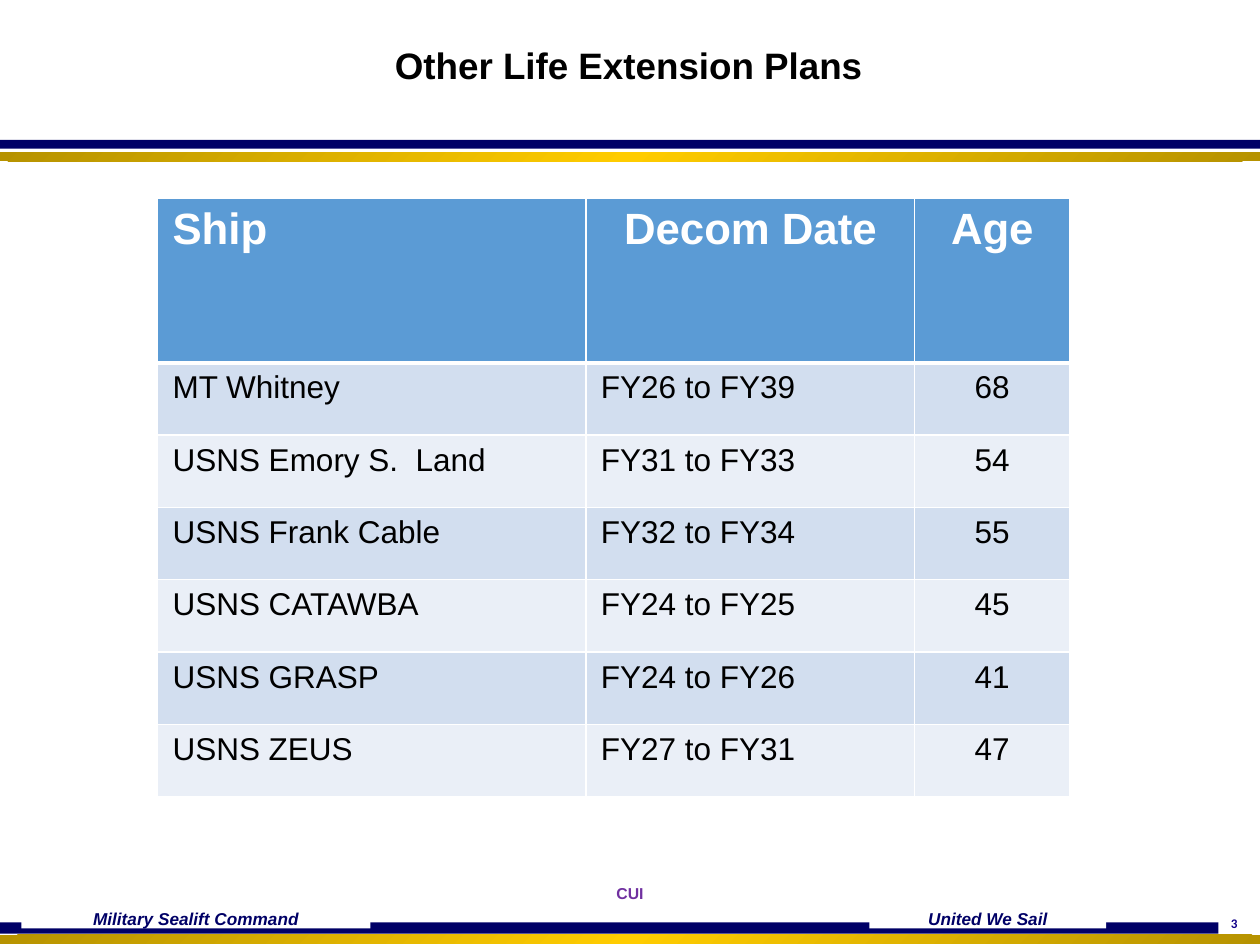
from dataclasses import dataclass
from typing import Optional

from lxml.etree import SubElement
from pptx import Presentation
from pptx.dml.color import RGBColor
from pptx.enum.shapes import MSO_SHAPE as Preset
from pptx.enum.text import MSO_ANCHOR as Anchor, PP_ALIGN as Align
from pptx.oxml import parse_xml
from pptx.oxml.ns import nsdecls, qn
from pptx.util import Inches, Pt

NAVY = RGBColor(0x00, 0x00, 0x66)
NUMBER_BLUE = RGBColor(0x11, 0x01, 0x89)
PURPLE = RGBColor(0x70, 0x30, 0xA0)
DARK_GOLD = RGBColor(0xB6, 0x92, 0x00)
GOLD = RGBColor(0xFF, 0xCC, 0x00)
HEADER_BLUE = RGBColor(0x5B, 0x9B, 0xD5)
BAND_DARK = RGBColor(0xD2, 0xDE, 0xEF)
BAND_LIGHT = RGBColor(0xEA, 0xEF, 0xF7)
WHITE = RGBColor(0xFF, 0xFF, 0xFF)
BLACK = RGBColor(0x00, 0x00, 0x00)

WIDTH, HEIGHT = Inches(10), Inches(7.5)
GRID_COLUMNS, GRID_ROWS = 100, 75


@dataclass(frozen=True)
class Area:
    column: float
    row: float
    columns: float
    rows: float

    def lengths(self) -> tuple[int, int, int, int]:
        return (across(self.column), down(self.row), across(self.columns), down(self.rows))


@dataclass(frozen=True)
class Bar:
    area: Area
    color: Optional[RGBColor] = None


@dataclass(frozen=True)
class Label:
    text: str
    area: Area
    font: dict
    spacing: float = 1.0
    anchor: Anchor = Anchor.TOP
    fill: Optional[RGBColor] = None
    wrap: bool = True


def across(columns: float) -> int:
    return round(WIDTH * columns / GRID_COLUMNS)


def down(rows: float) -> int:
    return round(HEIGHT * rows / GRID_ROWS)


def font_format(size: float, color: RGBColor, bold: bool = True,
                italic: bool = False, name: str = "Arial") -> dict:
    return {"name": name, "size": Pt(size), "bold": bold, "italic": italic, "color": color}


def apply_font(font, values: dict) -> None:
    for key, value in values.items():
        if key == "color":
            font.color.rgb = value
        else:
            setattr(font, key, value)


def fill_gold(fill) -> None:
    fill.gradient()
    fill.gradient_angle = 315
    stops = fill._fill._gradFill.find(qn("a:gsLst"))
    for stop in list(stops):
        stops.remove(stop)
    for position, color in ((0, DARK_GOLD), (50, GOLD), (100, DARK_GOLD)):
        stop = SubElement(stops, qn("a:gs"), pos=str(position * 1000))
        SubElement(stop, qn("a:srgbClr"), val=str(color))


def draw_bar(page, bar: Bar) -> None:
    shape = page.shapes.add_shape(Preset.RECTANGLE, *bar.area.lengths())
    shape.shadow.inherit = False
    shape.line.fill.background()
    if bar.color is None:
        fill_gold(shape.fill)
    else:
        shape.fill.solid()
        shape.fill.fore_color.rgb = bar.color


def draw_label(page, label: Label) -> None:
    box = page.shapes.add_textbox(*label.area.lengths())
    frame = box.text_frame
    frame.word_wrap = label.wrap
    frame.vertical_anchor = label.anchor
    if label.fill is not None:
        box.fill.solid()
        box.fill.fore_color.rgb = label.fill
        frame.margin_top = frame.margin_bottom = 0
    para = frame.paragraphs[0]
    para.alignment = Align.CENTER
    para.line_spacing = label.spacing
    span = para.add_run()
    span.text = label.text
    apply_font(span.font, label.font)


def draw_borders(cell, top: float, bottom: float) -> None:
    properties = cell._tc.get_or_add_tcPr()
    sides = {"lnL": 1, "lnR": 1, "lnT": top, "lnB": bottom}
    for index, (side, points) in enumerate(sides.items()):
        properties.insert(index, parse_xml(
            f'<a:{side} {nsdecls("a")} w="{Pt(points)}"><a:solidFill>'
            f'<a:srgbClr val="{WHITE}"/></a:solidFill></a:{side}>'))


def draw_cell(cell, text: str, row: int, column: int) -> None:
    header = row == 0
    margins = {"margin_left": 0.12, "margin_right": 0.12, "margin_top": 0.06, "margin_bottom": 0.06}
    for key, value in margins.items():
        setattr(cell, key, Inches(value))
    cell.fill.solid()
    cell.fill.fore_color.rgb = HEADER_BLUE if header else (BAND_LIGHT, BAND_DARK)[row % 2]
    draw_borders(cell, top=3 if row == 1 else 1, bottom=3 if header else 1)
    para = cell.text_frame.paragraphs[0]
    centered = column == 2 or (header and column == 1)
    para.alignment = Align.CENTER if centered else Align.LEFT
    span = para.add_run()
    span.text = text
    apply_font(span.font, HEADER_FONT if header else BODY_FONT)


def draw_table(page, area: Area, records: list) -> None:
    table = page.shapes.add_table(len(records), len(records[0]), *area.lengths()).table
    for column, columns in zip(table.columns, (34, 26.1, 12.3)):
        column.width = across(columns)
    for index, record in enumerate(records):
        table.rows[index].height = down(5.74 if index else 13.1)
        for column, text in enumerate(record):
            draw_cell(table.cell(index, column), text, index, column)


HEADER_FONT = font_format(25, WHITE)
BODY_FONT = font_format(18, BLACK, bold=False)
FOOTER_FONT = font_format(9.8, NAVY, italic=True)

BARS = [
    Bar(Area(0, 11.1, 100, 0.7), NAVY),
    Bar(Area(0, 12.1, 100, 0.7)),
    Bar(Area(0, 73.2, 96.7, 0.9), NAVY),
    Bar(Area(0, 74.2, 100, 0.7)),
]

LABELS = [
    Label("3", Area(96.3, 72.4, 3.3, 2), font_format(7.5, NUMBER_BLUE, name="Calibri"),
          spacing=0.8, wrap=False),
    Label("Military Sealift Command", Area(1.7, 72.1, 27.7, 1.6), FOOTER_FONT,
          anchor=Anchor.MIDDLE, fill=WHITE),
    Label("United We Sail", Area(69, 72.1, 18.8, 1.6), FOOTER_FONT,
          anchor=Anchor.MIDDLE, fill=WHITE),
    Label("CUI", Area(0, 69.8, 100, 3.3), font_format(9, PURPLE), spacing=0.9),
    Label("Other Life Extension Plans", Area(0, 0, 99.8, 10.8), font_format(21, BLACK),
          spacing=0.9, anchor=Anchor.MIDDLE),
]

SHIPS = [
    ("Ship", "Decom Date", "Age"),
    ("MT Whitney", "FY26 to FY39", "68"),
    ("USNS Emory S.  Land", "FY31 to FY33", "54"),
    ("USNS Frank Cable", "FY32 to FY34", "55"),
    ("USNS CATAWBA", "FY24 to FY25", "45"),
    ("USNS GRASP", "FY24 to FY26", "41"),
    ("USNS ZEUS", "FY27 to FY31", "47"),
]


def main() -> None:
    deck = Presentation()
    deck.slide_width, deck.slide_height = WIDTH, HEIGHT
    page = deck.slides.add_slide(deck.slide_layouts[6])
    for bar in BARS:
        draw_bar(page, bar)
    for label in LABELS:
        draw_label(page, label)
    draw_table(page, Area(12.5, 15.7, 72.4, 47.5), SHIPS)
    deck.save("out.pptx")


if __name__ == "__main__":
    main()
